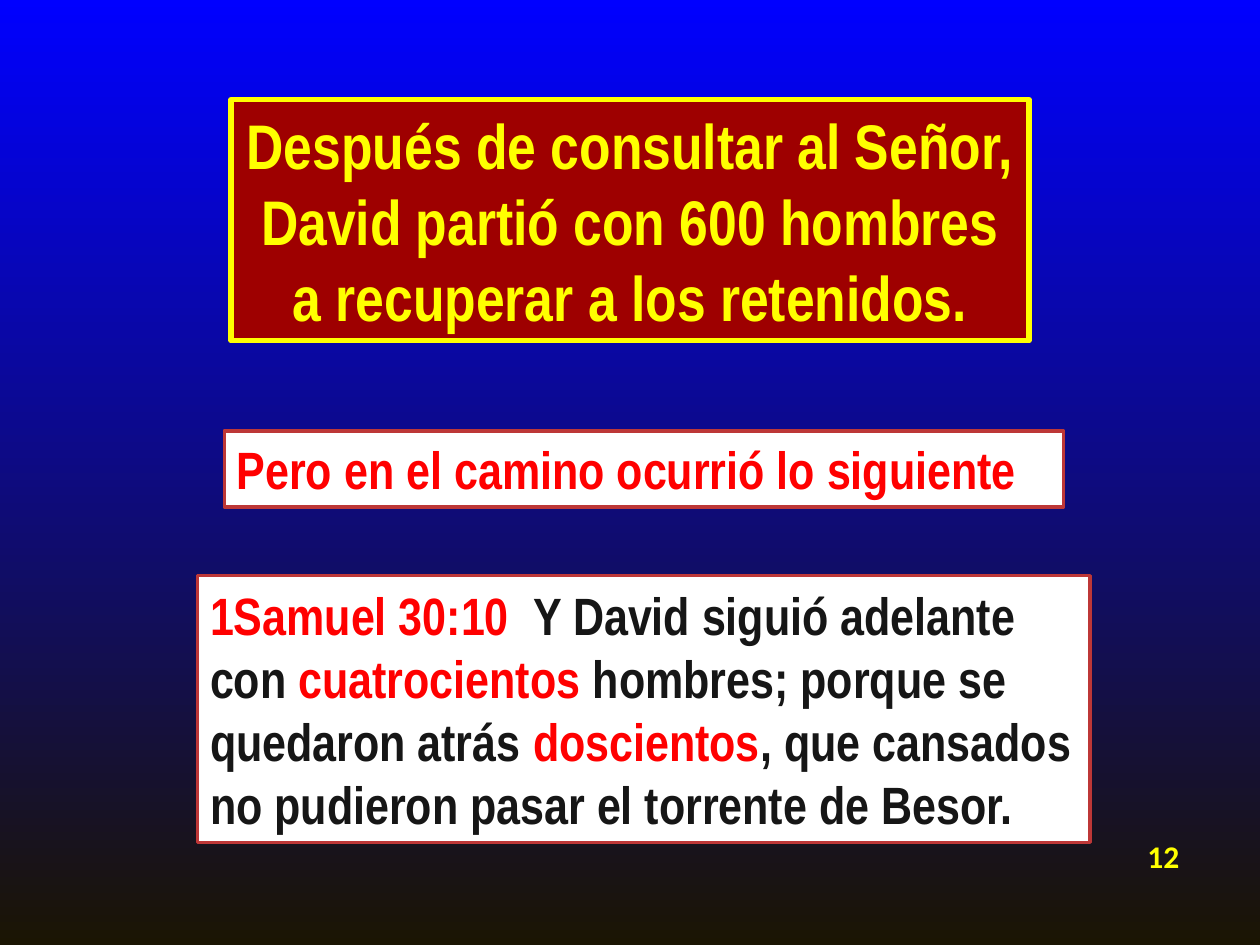
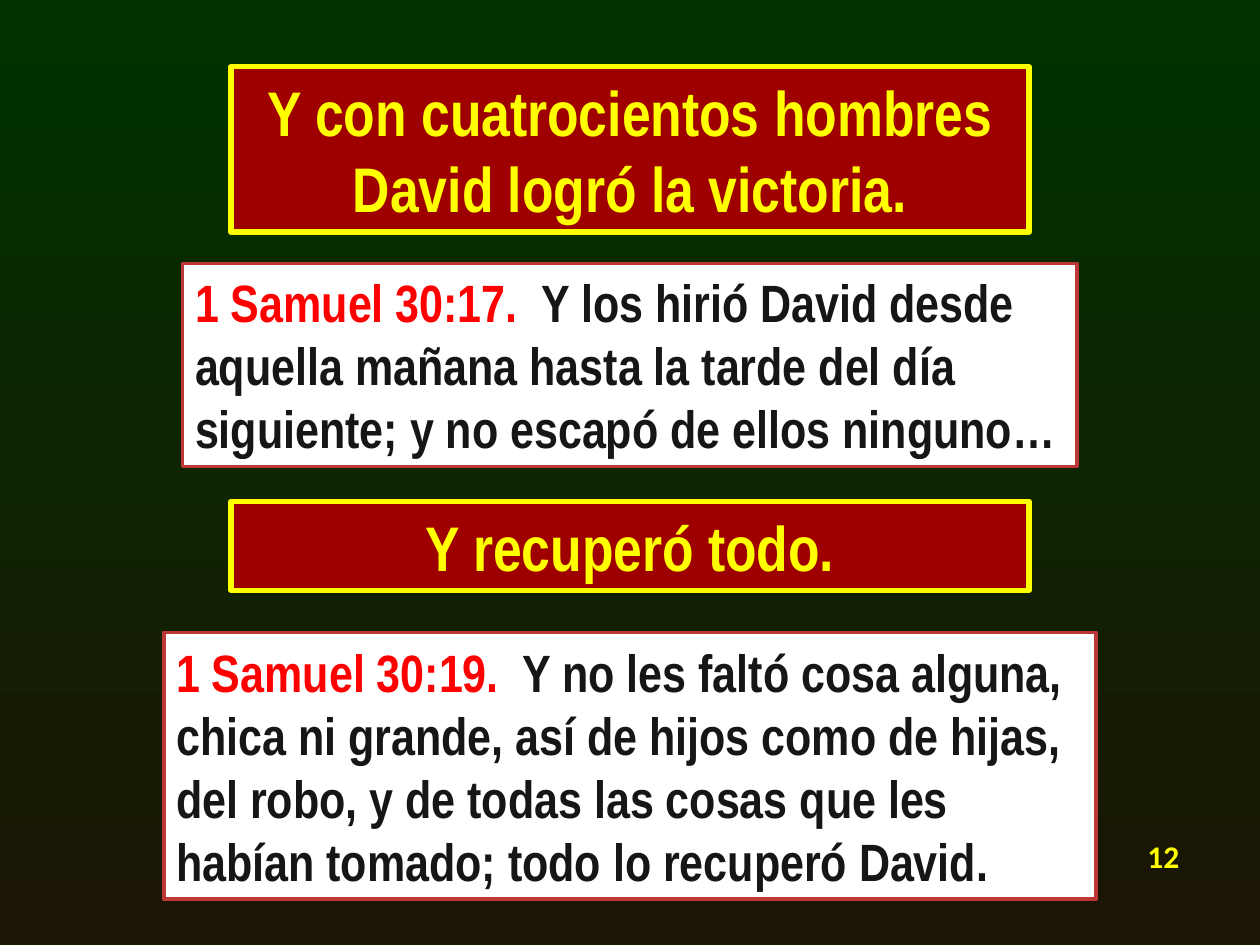
import pptx
import pptx.util
import pptx.dml.color
import pptx.enum.shapes
import pptx.enum.text
from lxml import etree

Pt = pptx.util.Pt
RGB = pptx.dml.color.RGBColor
ALIGN = pptx.enum.text.PP_ALIGN
FIT = pptx.enum.text.MSO_AUTO_SIZE
RECT = pptx.enum.shapes.MSO_SHAPE.RECTANGLE

YELLOW = RGB(0xFF, 0xFF, 0x00)
MAROON = RGB(0x9E, 0x00, 0x00)
WHITE = RGB(0xFF, 0xFF, 0xFF)
BRICK = RGB(0xBD, 0x37, 0x37)
RED = RGB(0xFF, 0x00, 0x00)
INK = RGB(0x16, 0x16, 0x16)
NAVY = RGB(0x00, 0x20, 0x60)
BLUE = RGB(0x00, 0x00, 0xFF)
GREEN = RGB(0x00, 0x33, 0x00)
DUSK = RGB(0x1B, 0x15, 0x03)

WIDTH, HEIGHT = 720, 540
FACE = "Arial Narrow"

# Text colour: (outline colour, outline width)
EDGES = {YELLOW: (YELLOW, 0.75), RED: (RED, 0.25), INK: (NAVY, 0.25)}

BANNER = {"fill": MAROON, "line": YELLOW, "weight": 3, "size": 36,
          "align": ALIGN.CENTER}
VERSE = {"fill": WHITE, "line": BRICK, "weight": 2, "size": 30,
         "align": ALIGN.LEFT}

# Each box: style, left, top, width, lines of text, runs.
# A left of None centres the box on the slide.
SLIDES = [
    {"sky": BLUE, "number": "12", "boxes": [
        (BANNER, None, 56.9, 456, 3, [
            ("Después de consultar al Señor, David partió con 600 hombres "
             "a recuperar a los retenidos.", YELLOW)]),
        (VERSE, 128.2, 246.2, 479.5, 1, [
            ("Pero en el camino ocurrió lo siguiente", RED)]),
        (VERSE, 113, 329, 510, 4, [
            ("1Samuel 30:10  ", RED),
            ("Y David siguió adelante con ", INK),
            ("cuatrocientos", RED),
            (" hombres; porque se quedaron atrás ", INK),
            ("doscientos", RED),
            (", que cansados no pudieron pasar el torrente de Besor.",
             INK)]),
    ]},
    {"sky": GREEN, "number": "12", "boxes": [
        (BANNER, None, 38.2, 456, 2, [
            ("Y con cuatrocientos hombres David logró la victoria.",
             YELLOW)]),
        (VERSE, None, 150.5, 511.2, 3, [
            ("1 Samuel 30:17.", RED),
            ("  Y los hirió David desde aquella mañana hasta la tarde del "
             "día siguiente; y no escapó de ellos ninguno…", INK)]),
        (BANNER, None, 286.5, 456, 1, [("Y recuperó todo.", YELLOW)]),
        (VERSE, None, 361.4, 532.8, 4, [
            ("1 Samuel 30:19.", RED),
            ("  Y no les faltó cosa alguna, chica ni grande, así de hijos "
             "como de hijas, del robo, y de todas las cosas que les habían "
             "tomado; todo lo recuperó David.", INK)]),
    ]},
]


def paint(slide, sky):
    """Fade the background from dusk at the foot to sky at the top."""
    fill = slide.background.fill
    fill.gradient()
    fill.gradient_angle = 90
    for stop, place, color in zip(fill.gradient_stops, (0, 1), (DUSK, sky)):
        stop.position = place
        stop.color.rgb = color


def style_run(run, face, size, color):
    font = run.font
    font.name, font.size, font.bold = face, Pt(size), True
    font.color.rgb = color
    edge, weight = EDGES[color]
    main = pptx.oxml.ns.nsdecls("a")
    line = pptx.oxml.parse_xml(
        f'<a:ln {main} w="{int(Pt(weight))}"><a:solidFill>'
        f'<a:srgbClr val="{edge}"/></a:solidFill></a:ln>')
    font._element.insert(0, line)


def write(frame, runs, face, size, align):
    par = frame.paragraphs[0]
    par.alignment = align
    for text, color in runs:
        run = par.add_run()
        run.text = text
        style_run(run, face, size, color)


def add_box(slide, style, left, top, width, lines, runs):
    """Fill the title first when it is still empty, then add rectangles."""
    size = style["size"]
    if left is None:
        left = (WIDTH - width) / 2
    high = lines * size * 1.21 + 7.2
    area = [Pt(n) for n in (left, top, width, high)]
    title = slide.shapes.title
    if title.text_frame.text:
        box = slide.shapes.add_shape(RECT, *area)
        box.shadow.inherit = False
    else:
        box = title
        box.left, box.top, box.width, box.height = area
    box.fill.solid()
    box.fill.fore_color.rgb = style["fill"]
    box.line.color.rgb = style["line"]
    box.line.width = Pt(style["weight"])
    frame = box.text_frame
    frame.word_wrap = True
    frame.auto_size = FIT.SHAPE_TO_FIT_TEXT
    write(frame, runs, FACE, size, style["align"])


def add_number(slide, text):
    box = slide.shapes.add_textbox(Pt(648), Pt(474.5), Pt(33), Pt(29))
    frame = box.text_frame
    frame.word_wrap = False
    frame.auto_size = FIT.SHAPE_TO_FIT_TEXT
    write(frame, [(text, YELLOW)], "Calibri", 18, ALIGN.RIGHT)


def main():
    deck = pptx.Presentation()
    deck.slide_width, deck.slide_height = Pt(WIDTH), Pt(HEIGHT)
    for page in SLIDES:
        slide = deck.slides.add_slide(deck.slide_layouts[5])
        paint(slide, page["sky"])
        for box in page["boxes"]:
            add_box(slide, *box)
        add_number(slide, page["number"])
    deck.save("out.pptx")


if __name__ == "__main__":
    main()
